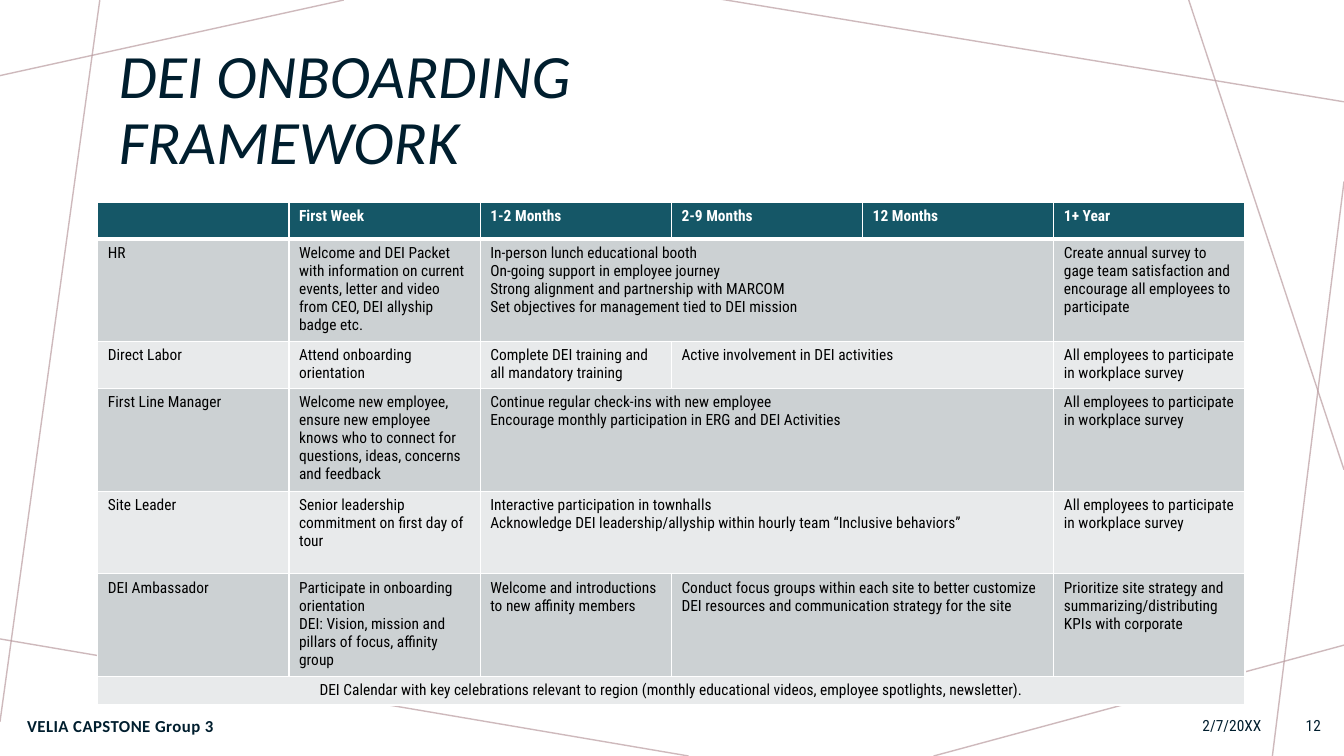
from lxml import etree
from pptx import Presentation
from pptx.dml.color import RGBColor
from pptx.enum.shapes import MSO_CONNECTOR
from pptx.enum.text import MSO_ANCHOR, MSO_AUTO_SIZE, PP_ALIGN
from pptx.oxml import parse_xml
from pptx.oxml.ns import nsdecls, qn
from pptx.util import Pt

LEFT, CENTER, RIGHT = PP_ALIGN.LEFT, PP_ALIGN.CENTER, PP_ALIGN.RIGHT
MIDDLE = MSO_ANCHOR.MIDDLE
NO_FIT = MSO_AUTO_SIZE.NONE
STRAIGHT = MSO_CONNECTOR.STRAIGHT

INK = RGBColor(0x00, 0x1E, 0x2E)
WHITE = RGBColor(0xFF, 0xFF, 0xFF)
BLACK = RGBColor(0x00, 0x00, 0x00)
ROSE = RGBColor(0xBA, 0x9C, 0xA0)
TEAL = RGBColor(0x15, 0x57, 0x67)
BAND_DARK = RGBColor(0xCC, 0xD1, 0xD3)
BAND_LIGHT = RGBColor(0xE8, 0xEA, 0xEB)

HEAD_FONT = "Calibri"
BODY_FONT = "Roboto Condensed"
PX = 9144  # 100 px to the inch

SURVEY = "All employees to participate in workplace survey"

# Each row: height, then (text, columns spanned)
ROWS = [
    (36, [("", 1), ("First Week", 1), ("1-2 Months", 1), ("2-9 Months", 1),
          ("12 Months", 1), ("1+ Year", 1)]),
    (84, [("HR", 1),
          ("Welcome and DEI Packet with information on current events, letter "
           "and video from CEO, DEI allyship badge etc.", 1),
          ("In-person lunch educational booth\n"
           "On-going support in employee journey\n"
           "Strong alignment and partnership with MARCOM\n"
           "Set objectives for management tied to DEI mission", 3),
          ("Create annual survey to gage team satisfaction and encourage all "
           "employees to participate", 1)]),
    (46, [("Direct Labor", 1),
          ("Attend onboarding orientation", 1),
          ("Complete DEI training and all mandatory training", 1),
          ("Active involvement in DEI activities", 2),
          (SURVEY, 1)]),
    (82, [("First Line Manager", 1),
          ("Welcome new employee, ensure new employee knows who to connect for "
           "questions, ideas, concerns and feedback", 1),
          ("Continue regular check-ins with new employee\n"
           "Encourage monthly participation in ERG and DEI Activities", 3),
          (SURVEY, 1)]),
    (82, [("Site Leader", 1),
          ("Senior leadership commitment on first day of tour", 1),
          ("Interactive participation in townhalls\n"
           "Acknowledge DEI leadership/allyship within hourly team "
           "“Inclusive behaviors”", 3),
          (SURVEY, 1)]),
    (85, [("DEI Ambassador", 1),
          ("Participate in onboarding orientation\n"
           "DEI: Vision, mission and pillars of focus, affinity group", 1),
          ("Welcome and introductions to new affinity members", 1),
          ("Conduct focus groups within each site to better customize DEI "
           "resources and communication strategy for the site", 2),
          ("Prioritize site strategy and summarizing/distributing KPIs with "
           "corporate", 1)]),
    (28, [("DEI Calendar with key celebrations relevant to region (monthly "
           "educational videos, employee spotlights, newsletter).", 6)]),
]

# Background lines: x1, y1, x2, y2
LINES = [
    (341, 0, 0, 75), (99, 0, 0, 716), (683, 750, -5, 633),
    (1333, 640, 926, 750), (1333, 180, 1262, 750),
    (1333, 466, 1179, 0), (1333, 101, 714, -1),
]


class Deck:
    """The current slide and the style of its elements."""

    def __init__(self, prs):
        self.s = prs.slides.add_slide(prs.slide_layouts[5])

    def style(self, p, size, color, font=BODY_FONT, bold=False, italic=False,
              align=LEFT):
        p.alignment = align
        f = p.font
        f.size, f.name, f.bold, f.italic = Pt(size), font, bold, italic
        f.color.rgb = color

    def line(self, *ends):
        c = self.s.shapes.add_connector(STRAIGHT, *(v * PX for v in ends))
        c.line.color.rgb = ROSE
        c.line.width = Pt(1)
        color = c.line._ln.find(".//" + qn("a:srgbClr"))
        etree.SubElement(color, qn("a:alpha"), val="70000")
        etree.SubElement(c._element.spPr, qn("a:effectLst"))

    def title(self, text, x, y, w, h):
        sp = self.s.shapes.title
        sp.left, sp.top, sp.width, sp.height = (v * PX for v in (x, y, w, h))
        tf = sp.text_frame
        tf.text = text
        tf.word_wrap, tf.auto_size, tf.vertical_anchor = True, NO_FIT, MIDDLE
        p = tf.paragraphs[0]
        p.line_spacing = 0.9
        self.style(p, 44, INK, HEAD_FONT, italic=True)

    def label(self, text, x, y, w, h, size=11, spacing=0, **look):
        sp = self.s.shapes.add_textbox(x * PX, y * PX, w * PX, h * PX)
        tf = sp.text_frame
        tf.text = text
        tf.word_wrap, tf.vertical_anchor = True, MIDDLE
        p = tf.paragraphs[0]
        self.style(p, size, INK, **look)
        if spacing:
            p.runs[0]._r.get_or_add_rPr().set("spc", str(spacing))

    def cell(self, cell, fill, color, bold, align, bottom):
        tcPr = cell._tc.get_or_add_tcPr()
        for side, width in (("L", 1), ("R", 1), ("T", 1), ("B", bottom)):
            tcPr.append(parse_xml(
                f'<a:ln{side} {nsdecls("a")} w="{Pt(width)}"><a:solidFill>'
                f'<a:srgbClr val="{WHITE}"/></a:solidFill></a:ln{side}>'))
        cell.fill.solid()
        cell.fill.fore_color.rgb = fill
        for p in cell.text_frame.paragraphs:
            self.style(p, 11, color, bold=bold, align=align)
            if not p.runs:
                etree.SubElement(p._p, qn("a:endParaRPr"), sz="1100")

    def table(self, rows, x, y, w, cols):
        h = sum(height for height, _ in rows)
        table = self.s.shapes.add_table(len(rows), cols, x * PX, y * PX,
                                        w * PX, h * PX).table
        table.horz_banding = False
        for i, (height, entries) in enumerate(rows):
            table.rows[i].height = height * PX
            col = 0
            for text, span in entries:
                first = table.cell(i, col)
                if span > 1:
                    first.merge(table.cell(i, col + span - 1))
                first.text = text
                col += span
            header = i == 0
            fill = TEAL if header else BAND_DARK if i % 2 else BAND_LIGHT
            align = CENTER if len(entries) == 1 else LEFT
            for cell in table.rows[i].cells:
                self.cell(cell, fill, WHITE if header else BLACK, header,
                          align, 3 if header else 1)


def main():
    prs = Presentation()
    prs.slide_width, prs.slide_height = 1333 * PX, 750 * PX
    deck = Deck(prs)

    # Background lines
    for ends in LINES:
        deck.line(*ends)

    # Title
    deck.title("DEI ONBOARDING \vFRAMEWORK", 108, 35, 1083, 151)

    # Footer
    deck.label("VELIA CAPSTONE Group 3", 17, 700, 492, 40, size=12,
               spacing=30, font=HEAD_FONT, bold=True)
    deck.label("2/7/20XX", 802, 700, 459, 40, align=RIGHT)
    deck.label("12", 1269, 700, 51, 40, align=RIGHT)

    # Framework table
    deck.table(ROWS, 97, 201, 1138, 6)

    prs.save("out.pptx")


if __name__ == "__main__":
    main()
